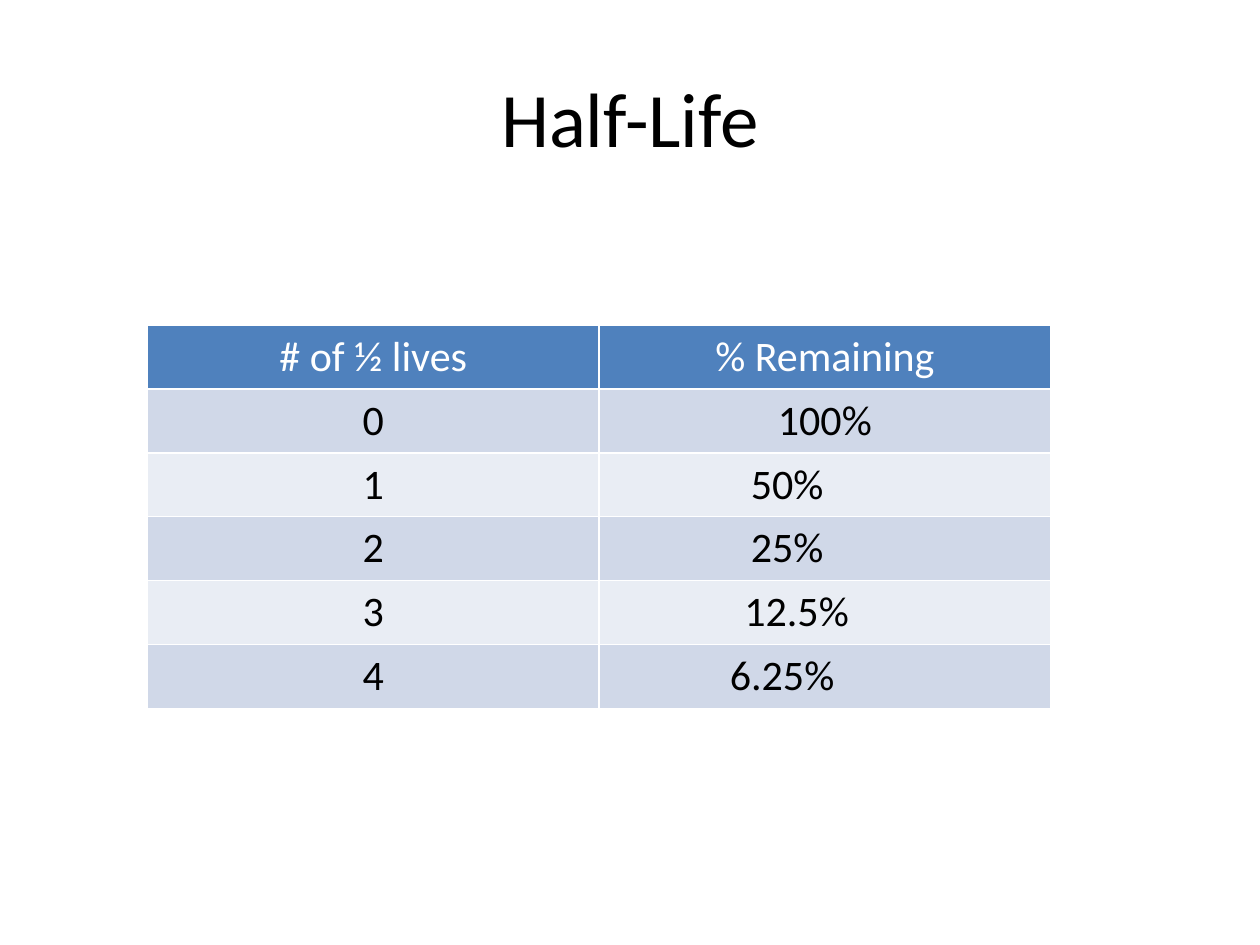
import pptx
import pptx.util
import pptx.dml.color
import pptx.enum.text

Inches = pptx.util.Inches
Pt = pptx.util.Pt

TITLE = "Half-Life"
HEADER = ("# of ½ lives", "% Remaining")
REMAINING = [
    ("0", "100%", 0),
    ("1", "50%", 0.6),
    ("2", "25%", 0.6),
    ("3", "12.5%", 0.45),
    ("4", "6.25%", 0.68),
]
COLORS = {
    "header": "4F81BD",
    "odd": "D0D8E8",
    "even": "E9EDF4",
    "light": "FFFFFF",
    "dark": "000000",
}
FONT = "Calibri"
CELL_MARGIN = 0.1
ROW_HEIGHT = 0.5
TABLE_LEFT, TABLE_TOP, TABLE_WIDTH = 1.17, 2.58, 7.17


def color(name):
    return pptx.dml.color.RGBColor.from_string(COLORS[name])


def write(frame, text, size, ink):
    para = frame.paragraphs[0]
    para.alignment = pptx.enum.text.PP_ALIGN.CENTER
    span = para.add_run()
    span.text = text
    span.font.name = FONT
    span.font.size = Pt(size)
    span.font.bold = False
    span.font.color.rgb = color(ink)


def add_title(page):
    title = page.shapes.title
    title.left, title.top = Inches(0.5), Inches(0.3)
    title.width, title.height = Inches(9), Inches(1.25)
    title.text_frame.vertical_anchor = pptx.enum.text.MSO_ANCHOR.MIDDLE
    write(title.text_frame, TITLE, 44, "dark")


def add_decay_table(page):
    rows = [(*HEADER, 0)] + REMAINING
    table = page.shapes.add_table(
        len(rows), len(HEADER), Inches(TABLE_LEFT), Inches(TABLE_TOP),
        Inches(TABLE_WIDTH), Inches(ROW_HEIGHT * len(rows)),
    ).table
    for row_index, (count, percent, indent) in enumerate(rows):
        if row_index == 0:
            fill, ink = "header", "light"
        else:
            fill, ink = ("odd" if row_index % 2 else "even"), "dark"
        for column_index, text in enumerate((count, percent)):
            cell = table.cell(row_index, column_index)
            cell.fill.solid()
            cell.fill.fore_color.rgb = color(fill)
            cell.margin_right = Inches(CELL_MARGIN + indent * column_index)
            write(cell.text_frame, text, 24, ink)


def main():
    deck = pptx.Presentation()
    deck.slide_width, deck.slide_height = Inches(10), Inches(7.5)
    page = deck.slides.add_slide(deck.slide_layouts[5])
    add_title(page)
    add_decay_table(page)
    deck.save("out.pptx")


if __name__ == "__main__":
    main()
